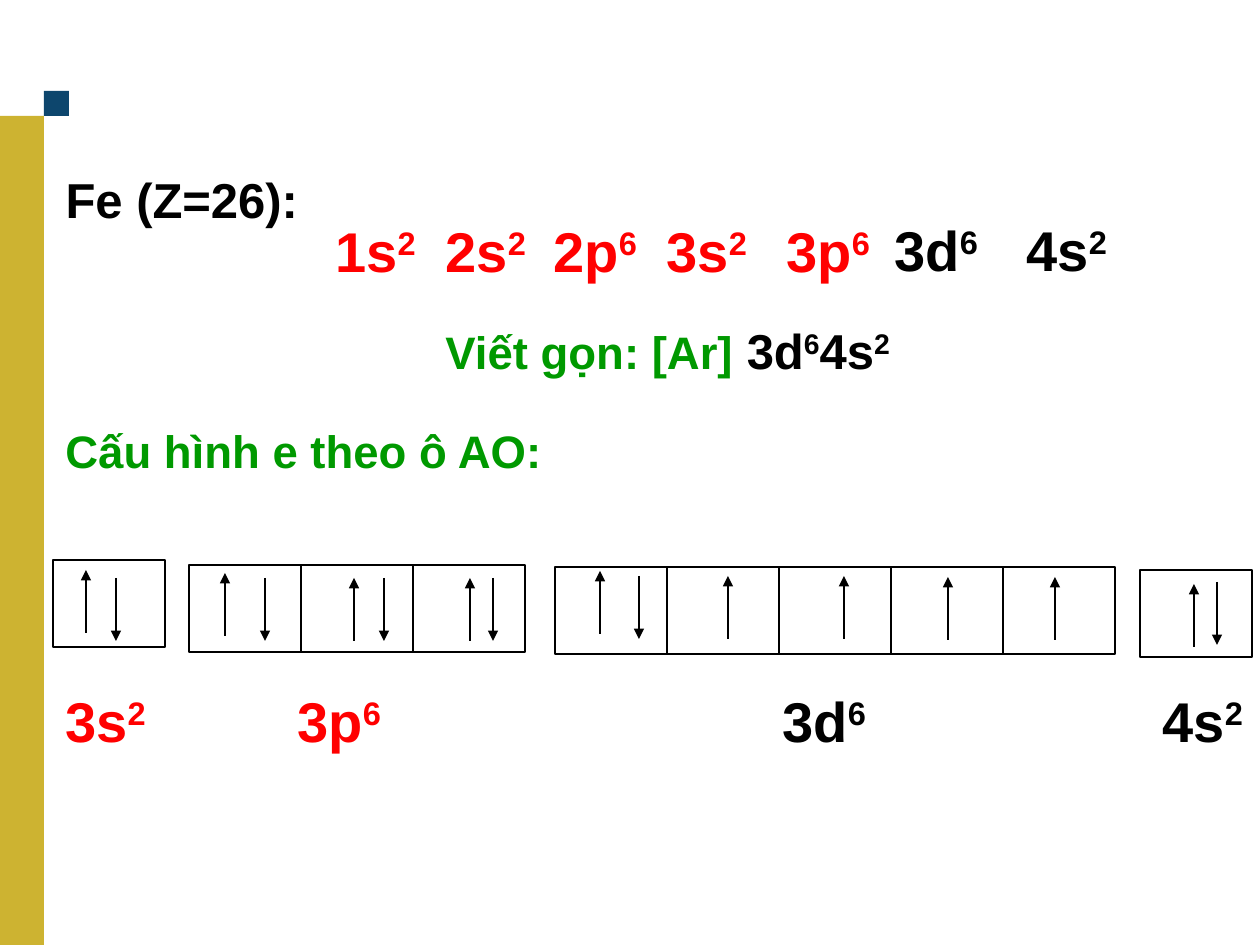
from lxml.etree import SubElement
from pptx import Presentation
from pptx.dml.color import RGBColor
from pptx.enum.shapes import MSO_CONNECTOR, MSO_SHAPE
from pptx.enum.text import MSO_ANCHOR, PP_ALIGN
from pptx.oxml.ns import qn
from pptx.util import Emu, Pt

SCALE = 914400 / 126
BLACK, RED, GREEN = "000000", "FF0000", "009900"
GOLD, NAVY = "CDB331", "0D466D"
CELL_WIDTH, CELL_HEIGHT, ARROW_LENGTH = 112, 87, 63
LABEL_WIDTH, LABEL_HEIGHT, LABEL_TOP = 110, 81, 680

SUBSHELLS = [
    ("1s", "2", RED, 323, 210),
    ("2s", "2", RED, 433, 210),
    ("2p", "6", RED, 541, 210),
    ("3s", "2", RED, 654, 210),
    ("3p", "6", RED, 774, 210),
    ("3d", "6", BLACK, 882, 209),
    ("4s", "2", BLACK, 1014, 209),
]

ORBITALS = [
    ("3s", "2", RED, (53, 560), 0, [[("up", 33, 10), ("down", 63, 18)]]),
    ("3p", "6", RED, (189, 565), 96, [
        [("up", 36, 8), ("down", 76, 13)],
        [("up", 53, 13), ("down", 83, 13)],
        [("up", 57, 13), ("down", 80, 13)],
    ]),
    ("3d", "6", BLACK, (555, 567), 215, [
        [("up", 45, 4), ("down", 84, 9)],
        [("up", 61, 9)],
        [("up", 65, 9)],
        [("up", 57, 10)],
        [("up", 52, 10)],
    ]),
    ("4s", "2", BLACK, (1140, 570), 10, [[("up", 54, 14), ("down", 77, 12)]]),
]


def px(*lengths):
    return [Emu(round(length * SCALE)) for length in lengths]


def color(value):
    return RGBColor.from_string(value)


def add_spans(para, spans):
    for text, size, value, raised in spans:
        span = para.add_run()
        span.text = text
        formats = {"name": "Arial", "size": Pt(size), "bold": True}
        for name, setting in formats.items():
            setattr(span.font, name, setting)
        span.font.color.rgb = color(value)
        if raised:
            span.font._element.set("baseline", "30000")


def add_text(page, box, spans):
    frame = page.shapes.add_textbox(*px(*box)).text_frame
    frame.word_wrap = True
    add_spans(frame.paragraphs[0], spans)


def add_title(page, box, spans):
    title = page.shapes.title
    for name, length in zip(("left", "top", "width", "height"), px(*box)):
        setattr(title, name, length)
    title.text_frame.vertical_anchor = MSO_ANCHOR.TOP
    para = title.text_frame.paragraphs[0]
    para.alignment = PP_ALIGN.LEFT
    add_spans(para, spans)


def add_subshell(page, left, top, name, count, value):
    spans = [(name, 32, value, False), (count, 32, value, True)]
    add_text(page, (left, top, LABEL_WIDTH, LABEL_HEIGHT), spans)


def add_rectangle(page, box, fill=None):
    shape = page.shapes.add_shape(MSO_SHAPE.RECTANGLE, *px(*box))
    shape.shadow.inherit = False
    if fill:
        shape.fill.solid()
        shape.fill.fore_color.rgb = color(fill)
        shape.line.fill.background()
    else:
        shape.fill.background()
        shape.line.color.rgb = color(BLACK)
        shape.line.width = Pt(0.75)


def add_electron(page, left, top, spin):
    ends = [top, top + ARROW_LENGTH]
    if spin == "up":
        ends.reverse()
    arrow = page.shapes.add_connector(
        MSO_CONNECTOR.STRAIGHT, *px(left, ends[0], left, ends[1]))
    arrow.line.color.rgb = color(BLACK)
    arrow.line.width = Pt(0.75)
    SubElement(arrow.line._get_or_add_ln(), qn("a:tailEnd"), type="triangle")
    SubElement(arrow._element.spPr, qn("a:effectLst"))


def add_sidebar(page):
    add_rectangle(page, (0, 116, 44, 829), GOLD)
    add_rectangle(page, (44, 91, 25, 25), NAVY)


def add_configuration(page):
    for name, count, value, left, top in SUBSHELLS:
        add_subshell(page, left, top, name, count, value)
    add_text(page, (433, 314, 522, 166), [
        ("Viết gọn: [Ar]", 26, GREEN, False),
        (" 3d", 28, BLACK, False),
        ("6", 28, BLACK, True),
        ("4s", 28, BLACK, False),
        ("2", 28, BLACK, True),
    ])


def add_orbital(page, left, top, cells):
    for index, electrons in enumerate(cells):
        cell_left = left + index * CELL_WIDTH
        add_rectangle(page, (cell_left, top, CELL_WIDTH, CELL_HEIGHT))
        for spin, across, down in electrons:
            add_electron(page, cell_left + across, top + down, spin)


def main():
    deck = Presentation()
    deck.slide_width, deck.slide_height = px(1260, 945)
    page = deck.slides.add_slide(deck.slide_layouts[5])
    add_sidebar(page)
    add_title(page, (53, 163, 289, 72), [("Fe (Z=26):", 28, BLACK, False)])
    add_configuration(page)
    add_text(page, (53, 417, 522, 68),
             [("Cấu hình e theo ô AO:", 26, GREEN, False)])
    for name, count, value, (left, top), label_offset, cells in ORBITALS:
        add_orbital(page, left, top, cells)
        add_subshell(page, left + label_offset, LABEL_TOP, name, count, value)
    deck.save("out.pptx")


if __name__ == "__main__":
    main()
